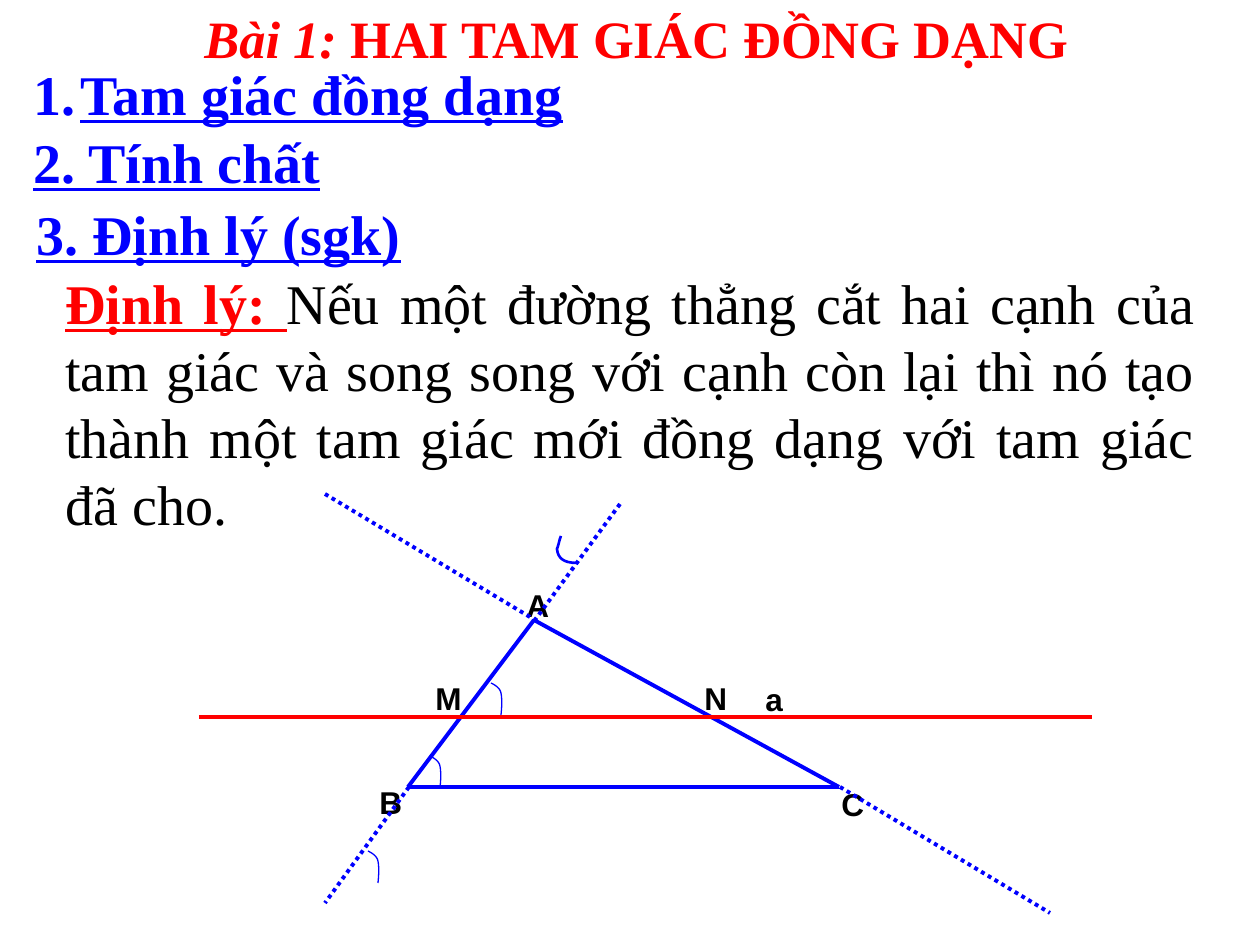
import pptx
import pptx.util
import pptx.dml.color
import pptx.enum.dml
import pptx.enum.shapes
import pptx.enum.text
import pptx.oxml.ns
import lxml.etree

SCALE = 914400 / 126  # EMU in one px
BLUE, RED, BLACK = "0000FF", "FF0000", "000000"
SERIF, SANS = "Times New Roman", "Arial"
ALIGN = pptx.enum.text.PP_ALIGN

# Triangle and the line parallel to its base: start, end, colour
A, B, C = (534, 620), (408, 787), (839, 787)
SOLID_LINES = [
    (A, B, BLUE), (A, C, BLUE), (C, B, BLUE),
    ((199, 717), (1092, 717), RED),
]
DOTTED_LINES = [
    ((620, 504), (535, 620)), ((325, 494), (535, 620)),
    ((409, 787), (325, 903)), ((840, 787), (1050, 913)),
]

# Angle marks: Bezier points after the start, three to a segment
ANGLE = [(4, 2), (9, 5), (10, 10), (11, 15), (11, 23), (10, 32)]
TOP_ANGLE = [(-2, 5), (-2, 8), (-4, 13), (-3, 22), (2, 27), (16, 27)]
ANGLE_MARKS = [  # start, curve, line width
    ((491, 683), ANGLE, 0.75),
    ((430, 756), ANGLE, 0.75),
    ((368, 851), ANGLE, 0.75),
    ((561, 536), TOP_ANGLE, 1.5),
]

POINT_LABELS = [  # text, left, top, width
    ("A", 514, 580, 63), ("B", 367, 777, 63), ("C", 829, 779, 63),
    ("M", 423, 673, 84), ("N", 692, 673, 84), ("a", 753, 674, 84),
]

HEADING = dict(size=32, color=BLUE, bold=True, underline=True)
TEXTS = [  # left, top, width, height, alignment, numbered, runs
    (53, 262, 1155, 285, ALIGN.JUSTIFY, False, [
        ("Định lý: ", dict(HEADING, color=RED)),
        ("Nếu một đường thẳng cắt hai cạnh của tam giác và song song với "
         "cạnh còn lại thì nó tạo thành một tam giác mới đồng dạng với "
         "tam giác đã cho.", dict(size=32)),
    ]),
    (-174, 0, 1608, 77, ALIGN.CENTER, False, [
        (" Bài 1: ", dict(size=30, color=RED, bold=True, italic=True)),
        ("HAI TAM GIÁC ĐỒNG DẠNG", dict(size=30, color=RED, bold=True)),
    ]),
    (21, 53, 577, 81, ALIGN.LEFT, True, [("Tam giác đồng dạng", HEADING)]),
    (24, 193, 456, 81, ALIGN.LEFT, False, [("3. Định lý (sgk)", HEADING)]),
    (21, 121, 577, 81, ALIGN.LEFT, False, [("2. Tính chất", HEADING)]),
]


def emu(px):
    return pptx.util.Emu(round(px * SCALE))


def rgb(color):
    return pptx.dml.color.RGBColor.from_string(color)


def add_line(page, start, end, color, dotted=False):
    line = page.shapes.add_connector(
        pptx.enum.shapes.MSO_CONNECTOR.STRAIGHT,
        *(emu(value) for value in start + end))
    line.line.color.rgb = rgb(color)
    line.line.width = pptx.util.Pt(2.25)
    if dotted:
        line.line.dash_style = pptx.enum.dml.MSO_LINE.ROUND_DOT
    properties = line._element.spPr
    lxml.etree.SubElement(properties, pptx.oxml.ns.qn("a:effectLst"))


def curve_points(controls, steps=8):
    """Sample consecutive cubic Bezier segments that begin at (0, 0)."""
    start, points = (0, 0), []
    for first in range(0, len(controls), 3):
        corners = [start] + controls[first:first + 3]
        for step in range(1, steps + 1):
            t = step / steps
            u = 1 - t
            weights = (u ** 3, 3 * u * u * t, 3 * u * t * t, t ** 3)
            points.append(tuple(
                sum(w * corner[axis] for w, corner in zip(weights, corners))
                for axis in (0, 1)))
        start = corners[-1]
    return points


def add_angle_mark(page, start, controls, width):
    left, top = start
    builder = page.shapes.build_freeform(emu(left), emu(top), scale=1.0)
    builder.add_line_segments(
        [(emu(left + x), emu(top + y)) for x, y in curve_points(controls)],
        close=False)
    mark = builder.convert_to_shape()
    mark.fill.background()
    mark.line.color.rgb = rgb(BLUE)
    mark.line.width = pptx.util.Pt(width)
    mark.shadow.inherit = False


def number_paragraph(para):
    properties = para._p.get_or_add_pPr()
    indent = emu(47)
    properties.set("marL", str(indent))
    properties.set("indent", str(-indent))
    lxml.etree.SubElement(
        properties, pptx.oxml.ns.qn("a:buAutoNum"), type="arabicPeriod")


def add_run(para, text, font_name, size, color=BLACK,
            bold=False, italic=False, underline=False):
    span = para.add_run()
    span.text = text
    font = span.font
    font.name, font.size = font_name, pptx.util.Pt(size)
    font.bold, font.italic, font.underline = bold, italic, underline
    font.color.rgb = rgb(color)


def add_text(page, left, top, width, height, align, numbered, runs,
             font_name=SERIF):
    box = page.shapes.add_textbox(
        emu(left), emu(top), emu(width), emu(height))
    frame = box.text_frame
    frame.word_wrap = True
    frame.auto_size = pptx.enum.text.MSO_AUTO_SIZE.SHAPE_TO_FIT_TEXT
    para = frame.paragraphs[0]
    para.alignment = align
    if numbered:
        number_paragraph(para)
    for text, style in runs:
        add_run(para, text, font_name, **style)


def main():
    deck = pptx.Presentation()
    deck.slide_width, deck.slide_height = emu(1260), emu(945)
    page = deck.slides.add_slide(deck.slide_layouts[6])
    for start, end, color in SOLID_LINES:
        add_line(page, start, end, color)
    for text, left, top, width in POINT_LABELS:
        add_text(page, left, top, width, 50, ALIGN.LEFT, False,
                 [(text, dict(size=18, bold=True))], SANS)
    for start, end in DOTTED_LINES:
        add_line(page, start, end, BLUE, dotted=True)
    for mark in ANGLE_MARKS:
        add_angle_mark(page, *mark)
    for text in TEXTS:
        add_text(page, *text)
    deck.save("out.pptx")


if __name__ == "__main__":
    main()
